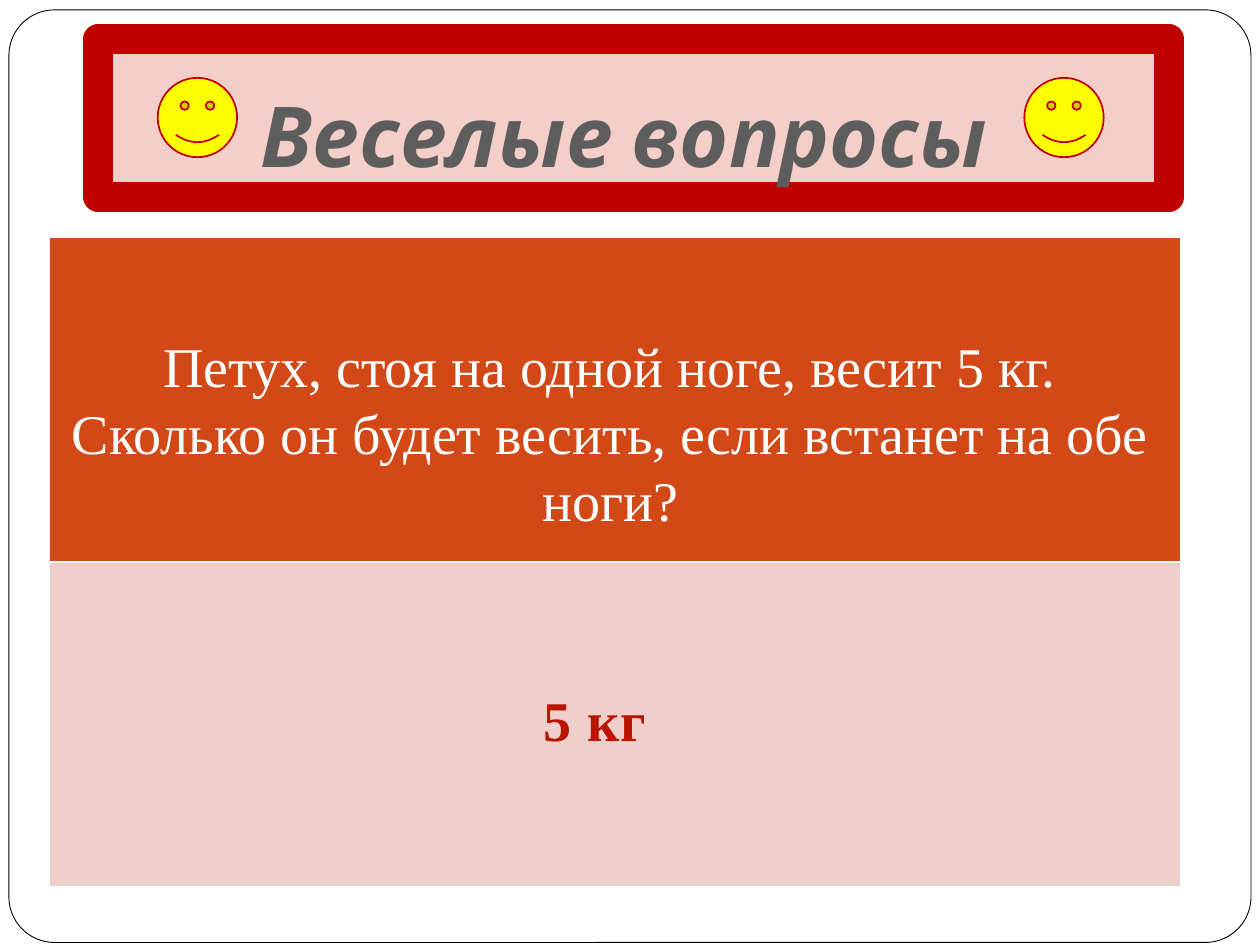
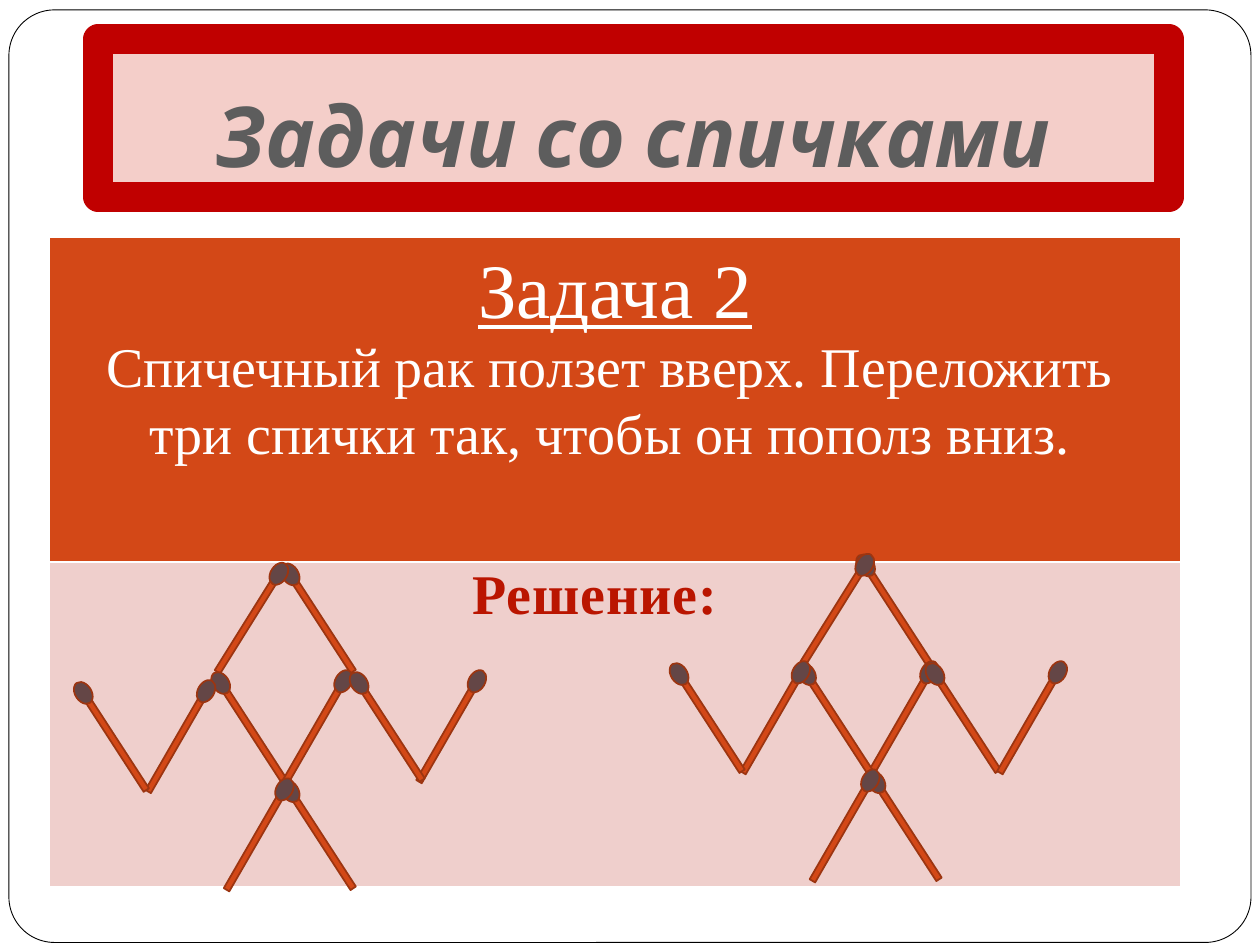
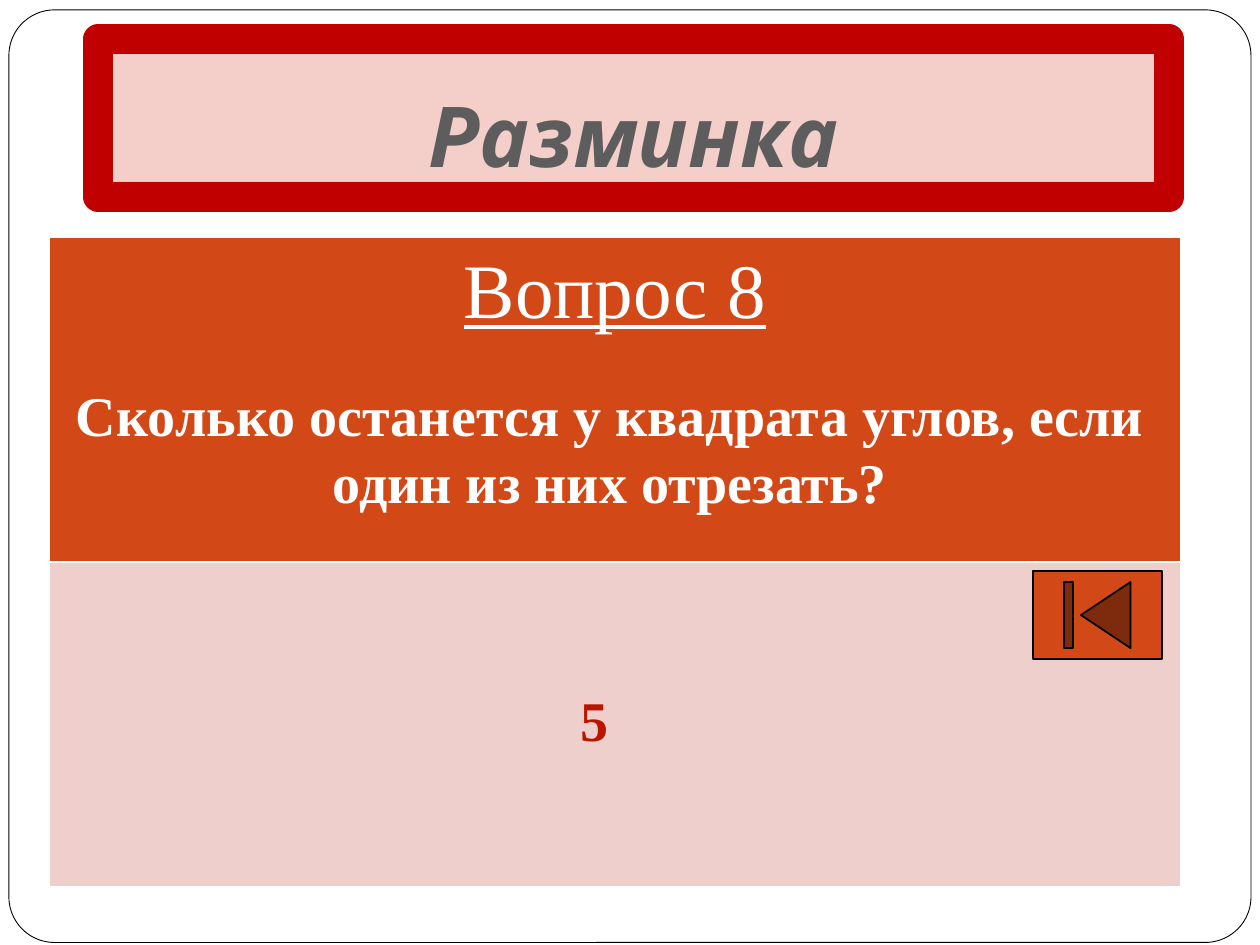
from math import cos, radians, sin

from lxml import etree
from pptx import Presentation
from pptx.dml.color import RGBColor
from pptx.enum.shapes import MSO_SHAPE
from pptx.enum.text import MSO_ANCHOR, MSO_AUTO_SIZE, PP_ALIGN
from pptx.oxml.ns import qn
from pptx.util import Cm, Pt

COLORS = {
    "white": "FFFFFF", "black": "000000", "title": "5D5D5D",
    "title_fill": "F4CEC9", "title_line": "C00000", "smiley": "FFFF00",
    "question": "D34817", "answer": "EFCFCC", "answer_text": "BA1500",
    "match_head": "644646", "match_line": "9C3511",
}
TITLE_FONT, BODY_FONT = "Karla", "Times New Roman"

# Boxes in cm: left, top, width, height
FRAME = (0.18, 0.2, 25.04, 18.8)
TITLE = (1.98, 0.79, 21.59, 3.18)
BOARD = (0.99, 4.78, 22.81, 13.1)
LEFT_CRAB = (1, 11.4)
RIGHT_CRAB = (13, 11.2)

# Matches in a crab: centre x, centre y, rotation
CRAB_UP = [
    (8, 3.4, 30), (5.52, 1.21, 327), (3.97, 1.21, 32), (4.12, 3.4, 327),
    (5.31, 3.4, 30), (2.54, 3.6, 30), (6.91, 3.4, 327), (1.35, 3.6, 327),
    (5.52, 5.58, 327), (4.12, 5.58, 30),
]
CRAB_DOWN = [
    (5.12, 1.23, 327), (3.78, 1.23, 32), (5.12, 3.42, 30), (3.93, 3.42, 327),
    (6.52, 3.42, 327), (7.71, 3.42, 30), (2.53, 3.42, 30), (1.36, 3.42, 327),
    (5.33, 5.6, 327), (3.93, 5.6, 30),
]


def rgb(name):
    return RGBColor.from_string(COLORS[name])


def place(sp, box):
    sp.left, sp.top, sp.width, sp.height = (Cm(v) for v in box)


def paint(sp, fill, line, width):
    sp.fill.solid()
    sp.fill.fore_color.rgb = rgb(fill)
    sp.line.color.rgb = rgb(line)
    sp.line.width = Pt(width)


def add_shape(shapes, kind, box, fill, line, width=1):
    sp = shapes.add_shape(kind, *(Cm(v) for v in box))
    sp.shadow.inherit = False
    paint(sp, fill, line, width)
    return sp


def style_text(tf, font, size, color, **styles):
    p = tf.paragraphs[0]
    p.alignment = PP_ALIGN.CENTER
    r = p.runs[0]
    r.font.name, r.font.size = font, Pt(size)
    r.font.color.rgb = rgb(color)
    for name, value in styles.items():
        setattr(r.font, name, value)
    return r


def add_text(slide, text, box, size, color, **styles):
    tf = slide.shapes.add_textbox(*(Cm(v) for v in box)).text_frame
    tf.word_wrap = True
    tf.auto_size = MSO_AUTO_SIZE.SHAPE_TO_FIT_TEXT
    tf.text = text
    return style_text(tf, BODY_FONT, size, color, **styles)


def add_layout_frame(layout, slide):
    """Draw the rounded page frame and move it to the shared layout."""
    sp = add_shape(slide.shapes, MSO_SHAPE.ROUNDED_RECTANGLE, FRAME, "white", "black", 0.5)
    sp.adjustments[0] = 0.049
    sp.element.nvSpPr.cNvPr.set("id", "20")
    layout.shapes.element.insert(2, sp.element)


def format_title(slide, text, box):
    sp = slide.shapes.title
    place(sp, box)
    paint(sp, "title_fill", "title_line", 17)
    etree.SubElement(sp.line._get_or_add_ln(), qn("a:round"))
    tf = sp.text_frame
    tf.text = text
    tf.word_wrap = True
    tf.auto_size = MSO_AUTO_SIZE.NONE
    tf.vertical_anchor = MSO_ANCHOR.BOTTOM
    tf.margin_bottom = Cm(0.25)
    style_text(tf, TITLE_FONT, 48, "title", bold=True, italic=True)


def set_borders(cell, color):
    tcPr = cell._tc.get_or_add_tcPr()
    for i, side in enumerate(("lnL", "lnR", "lnT", "lnB")):
        ln = etree.Element(qn(f"a:{side}"), w=str(Pt(1)))
        fill = etree.SubElement(ln, qn("a:solidFill"))
        etree.SubElement(fill, qn("a:srgbClr"), val=COLORS[color])
        tcPr.insert(i, ln)


def add_board(slide, box):
    """Two-row table: question above, answer below."""
    table = slide.shapes.add_table(2, 1, *(Cm(v) for v in box)).table
    for row, fill in zip(table.rows, ("question", "answer")):
        cell = row.cells[0]
        cell.fill.solid()
        cell.fill.fore_color.rgb = rgb(fill)
        set_borders(cell, "white")


def add_question(slide, board, text, dy, height, bold=False):
    left, top, width, _ = board
    add_text(slide, text, (left + 0.2, top + dy, width - 0.59, height), 32, "white", bold=bold)


def add_heading(slide, board, text):
    left, top = board[:2]
    add_text(slide, text, (left + 6.15, top - 0.03, 10.52, 2.13), 44, "white", underline=True)


def add_answer(slide, board, text, dy=8.91, width=10.11):
    left, top = board[:2]
    box = (left + 11 - width / 2, top + dy, width, 1.63)
    r = add_text(slide, text, box, 32, "answer_text", bold=True)
    r.font._element.set("spc", "50")


def add_smileys(slide, box):
    left, top = box[:2]
    for dx in (1.2, 18.67):
        add_shape(slide.shapes, MSO_SHAPE.SMILEY_FACE,
                  (left + dx, top + 0.78, 1.6, 1.6), "smiley", "title_line")


def add_match(slide, x, y, angle):
    """Stick centred on (x, y), with its head at the upper end."""
    group = slide.shapes.add_group_shape()
    head_x = x + 1.23 * sin(radians(angle))
    head_y = y - 1.23 * cos(radians(angle))
    for kind, cx, cy, w, h, fill in (
        (MSO_SHAPE.RECTANGLE, x, y, 0.13, 2.21, "question"),
        (MSO_SHAPE.OVAL, head_x, head_y, 0.33, 0.48, "match_head"),
    ):
        box = (cx - w / 2, cy - h / 2, w, h)
        add_shape(group.shapes, kind, box, fill, "match_line").rotation = angle


def add_crab(slide, origin, matches):
    left, top = origin
    for x, y, angle in matches:
        add_match(slide, left + x, top + y, angle)


def add_back_button(slide, board):
    left, top = board[:2]
    add_shape(slide.shapes, MSO_SHAPE.ACTION_BUTTON_BEGINNING,
              (left + 19.84, top + 6.73, 2.59, 1.78), "question", "black")


def add_quiz_slide(prs, title):
    slide = prs.slides.add_slide(prs.slide_layouts[5])
    format_title(slide, title, TITLE)
    add_board(slide, BOARD)
    return slide


def main():
    prs = Presentation()
    prs.slide_width, prs.slide_height = Cm(25.4), Cm(19.05)

    # Funny questions
    slide = add_quiz_slide(prs, "Веселые вопросы ")
    add_layout_frame(prs.slide_layouts[5], slide)
    add_question(slide, BOARD, "Петух, стоя на одной ноге, весит 5 кг. "
                 "Сколько он будет весить, если встанет на обе ноги?", 1.77, 4.37)
    add_answer(slide, BOARD, "5 кг")
    add_smileys(slide, TITLE)

    # Match puzzle
    slide = add_quiz_slide(prs, "Задачи со спичками")
    add_question(slide, BOARD, "Спичечный рак ползет вверх. Переложить "
                 "три спички так, чтобы он пополз вниз.", 1.77, 3)
    add_heading(slide, BOARD, "Задача 2")
    add_answer(slide, BOARD, "Решение:", 6.35, 8.53)
    add_crab(slide, LEFT_CRAB, CRAB_UP)
    add_crab(slide, RIGHT_CRAB, CRAB_DOWN)

    # Warm-up
    slide = add_quiz_slide(prs, "Разминка")
    add_question(slide, BOARD, "Сколько останется у квадрата углов, "
                 "если один из них отрезать?", 2.76, 3, bold=True)
    add_heading(slide, BOARD, "Вопрос 8")
    add_answer(slide, BOARD, "5")
    add_back_button(slide, BOARD)

    prs.save("out.pptx")


if __name__ == "__main__":
    main()
